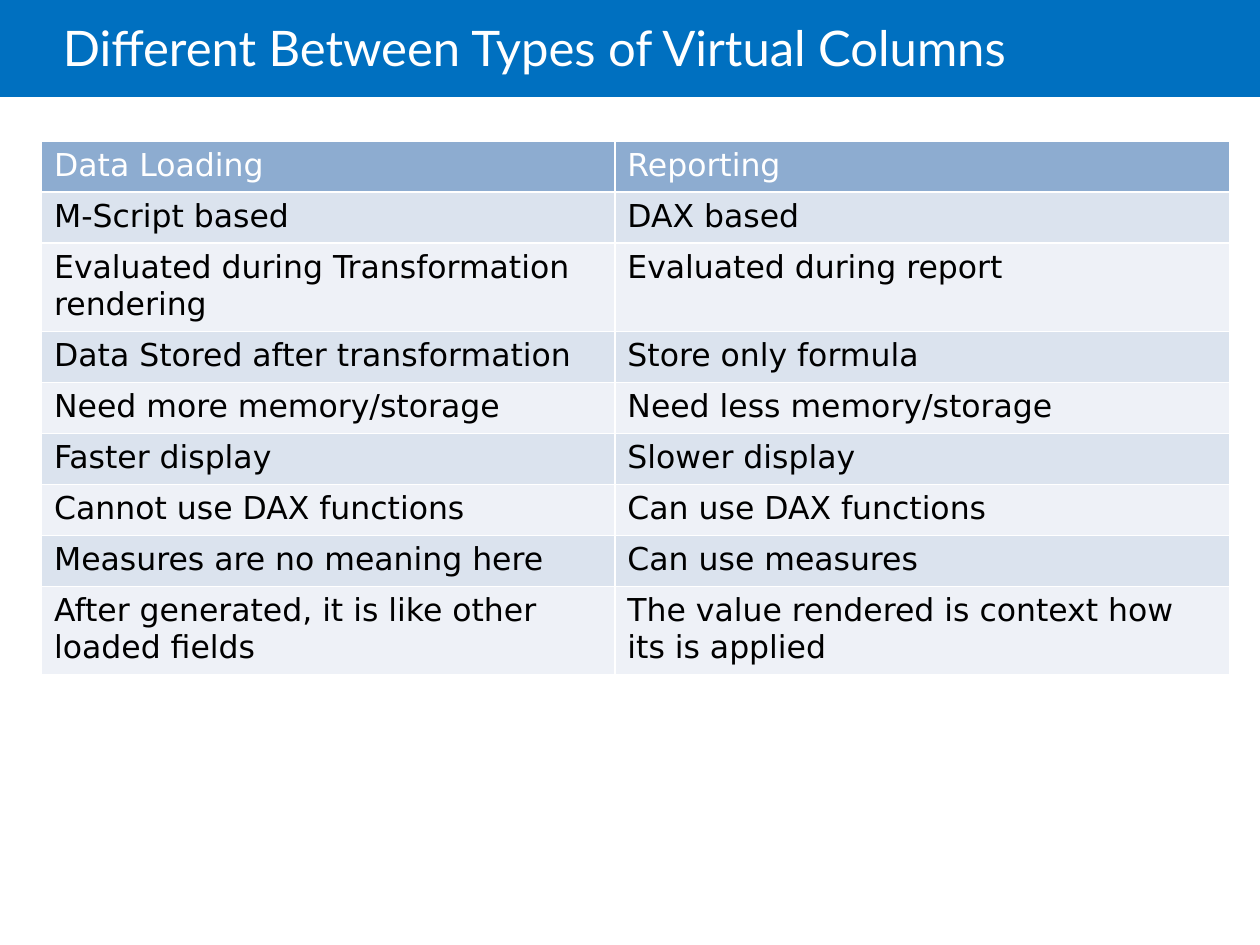
from dataclasses import dataclass
from typing import NamedTuple

from lxml import etree
from pptx import Presentation
from pptx import util as u
from pptx.dml.color import RGBColor
from pptx.enum import shapes, text
from pptx.oxml import ns


@dataclass(frozen=True)
class Theme:
    banner: str = "0070C0"
    header: str = "8DACD0"
    bands: tuple[str, str] = ("DBE3EE", "EEF1F7")
    light: str = "FFFFFF"
    dark: str = "000000"
    title_font: str = "Lato"
    table_font: str = "DejaVu Sans"
    title_size: int = 28
    table_size: int = 18
    border: int = 1


class Box(NamedTuple):
    """Left, top, width and height in inches."""
    left: float
    top: float
    width: float
    height: float

    def emu(self) -> list[int]:
        return [u.Inches(length) for length in self]


class Comparison(NamedTuple):
    loading: str
    reporting: str


THEME = Theme()
SLIDE_WIDTH, SLIDE_HEIGHT = 10, 7.5
BANNER = Box(0, 0, SLIDE_WIDTH, 0.77)
TITLE = Box(0.5, 0, 8.5, 0.81)
COLUMN_WIDTHS = (4.55, 4.88)
ROW_HEIGHT = 0.054 * SLIDE_HEIGHT
COMPARISONS = [
    Comparison("Data Loading", "Reporting"),
    Comparison("M-Script based", "DAX based"),
    Comparison("Evaluated during Transformation rendering", "Evaluated during report"),
    Comparison("Data Stored after transformation", "Store only formula"),
    Comparison("Need more memory/storage", "Need less memory/storage"),
    Comparison("Faster display", "Slower display"),
    Comparison("Cannot use DAX functions", "Can use DAX functions"),
    Comparison("Measures are no meaning here", "Can use measures"),
    Comparison("After generated, it is like other loaded fields",
               "The value rendered is context how its is applied"),
]
TABLE = Box(0.33, 1.12, sum(COLUMN_WIDTHS), ROW_HEIGHT * len(COMPARISONS))


def apply_format(target, values: dict) -> None:
    for name, value in values.items():
        setattr(target, name, value)


def paint(fill, color: str) -> None:
    fill.solid()
    fill.fore_color.rgb = RGBColor.from_string(color)


def write(paragraph, words: str, font: str, size: int, color: str) -> None:
    run = paragraph.add_run()
    run.text = words
    apply_format(run.font, {"name": font, "size": u.Pt(size), "bold": False})
    run.font.color.rgb = RGBColor.from_string(color)


def add_banner(slide) -> None:
    banner = slide.shapes.add_shape(shapes.MSO_SHAPE.RECTANGLE, *BANNER.emu())
    banner.shadow.inherit = False
    paint(banner.fill, THEME.banner)
    banner.line.fill.background()


def add_title(slide, words: str) -> None:
    frame = slide.shapes.add_textbox(*TITLE.emu()).text_frame
    apply_format(frame, {
        "word_wrap": True,
        "vertical_anchor": text.MSO_ANCHOR.MIDDLE,
        "margin_left": 0,
    })
    paragraph = frame.paragraphs[0]
    paragraph.line_spacing = 0.85
    write(paragraph, words, THEME.title_font, THEME.title_size, THEME.light)


def add_borders(cell) -> None:
    properties = cell._tc.get_or_add_tcPr()
    for side in ("a:lnL", "a:lnR", "a:lnT", "a:lnB"):
        line = etree.SubElement(properties, ns.qn(side), w=str(u.Pt(THEME.border)))
        fill = etree.SubElement(line, ns.qn("a:solidFill"))
        etree.SubElement(fill, ns.qn("a:srgbClr"), val=THEME.light)


def add_comparison_table(slide, comparisons: list[Comparison]) -> None:
    table = slide.shapes.add_table(
        len(comparisons), len(COLUMN_WIDTHS), *TABLE.emu()).table
    for column, width in zip(table.columns, COLUMN_WIDTHS):
        column.width = u.Inches(width)
    for index, comparison in enumerate(comparisons):
        table.rows[index].height = u.Inches(ROW_HEIGHT)
        is_header = index == 0
        background = THEME.header if is_header else THEME.bands[(index - 1) % 2]
        color = THEME.light if is_header else THEME.dark
        for cell, words in zip(table.rows[index].cells, comparison):
            add_borders(cell)
            paint(cell.fill, background)
            write(cell.text_frame.paragraphs[0], words,
                  THEME.table_font, THEME.table_size, color)


def main() -> None:
    presentation = Presentation()
    apply_format(presentation, {
        "slide_width": u.Inches(SLIDE_WIDTH),
        "slide_height": u.Inches(SLIDE_HEIGHT),
    })
    slide = presentation.slides.add_slide(presentation.slide_layouts[6])
    add_banner(slide)
    add_title(slide, "Different Between Types of Virtual Columns")
    add_comparison_table(slide, COMPARISONS)
    presentation.save("out.pptx")


if __name__ == "__main__":
    main()
